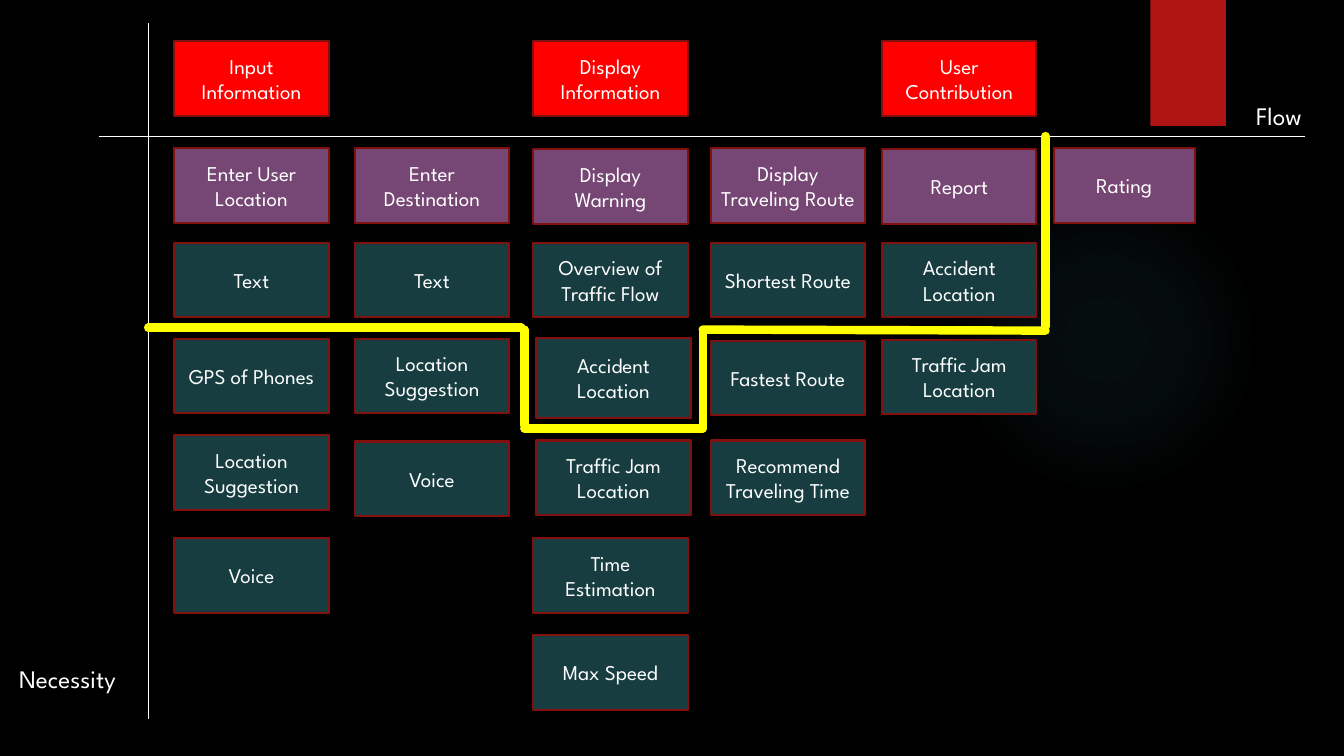
from lxml.etree import SubElement
from pptx import Presentation
from pptx.dml.color import RGBColor
from pptx.enum.shapes import MSO_CONNECTOR, MSO_SHAPE
from pptx.enum.text import MSO_ANCHOR, PP_ALIGN
from pptx.oxml import parse_xml
from pptx.oxml.ns import nsdecls, qn
from pptx.util import Inches, Pt

COLORS = {
    "background": "000000", "text": "FFFFFF", "axis": "FFFFFF",
    "activity": "FF0000", "task": "764674", "detail": "173D40",
    "border": "82100E", "release": "FFFF00", "ribbon": "B01513", "glow": "50B9C1",
}
FONT = "League Spartan"
CARD_WIDTH, CARD_HEIGHT = 1.53, 0.74

# Each column holds its left edge and its cards as (kind, top, text), relative to the board.
COLUMNS = [
    (0, [("activity", 0, "Input Information"), ("task", 1.06, "Enter User Location"),
         ("detail", 2, "Text"), ("detail", 2.95, "GPS of Phones"),
         ("detail", 3.91, "Location Suggestion"), ("detail", 4.93, "Voice")]),
    (1.79, [("task", 1.06, "Enter Destination"), ("detail", 2, "Text"),
            ("detail", 2.95, "Location Suggestion"), ("detail", 3.97, "Voice")]),
    (3.56, [("activity", 0, "Display Information"), ("task", 1.07, "Display Warning"),
            ("detail", 2, "Overview of Traffic Flow"),
            ("detail", 4.93, "Time Estimation"), ("detail", 5.89, "Max Speed")]),
    (3.59, [("detail", 2.94, "Accident Location"), ("detail", 3.96, "Traffic Jam Location")]),
    (5.32, [("task", 1.06, "Display Traveling Route"), ("detail", 2, "Shortest Route"),
            ("detail", 2.97, "Fastest Route"), ("detail", 3.96, "Recommend Traveling Time")]),
    (7.02, [("activity", 0, "User Contribution"), ("task", 1.07, "Report"),
            ("detail", 2, "Accident Location"), ("detail", 2.96, "Traffic Jam Location")]),
    (8.72, [("task", 1.06, "Rating")]),
]
SPECIAL_SIZES = {"Rating": (1.4, CARD_HEIGHT), (3.59, 2.94): (CARD_WIDTH, 0.8)}
RELEASE_SEGMENTS = [
    (0, 1.9, 3.7, 1.9), (3.73, 1.92, 3.73, 2.87), (3.73, 2.9, 5.5, 2.9),
    (5.5, 2.9, 5.5, 1.93), (5.5, 1.92, 8.9, 1.93), (8.9, 1.89, 8.9, 0),
]


def color(name):
    """Return the named colour."""
    return RGBColor.from_string(COLORS[name])


def add_run(paragraph, text, size):
    """Add one formatted run to a paragraph."""
    run = paragraph.add_run()
    run.text = text
    run.font.name = FONT
    run.font.size = Pt(size)
    run.font.color.rgb = color("text")


def add_block(slide, kind, box, fill):
    """Add a flat preset shape without outline."""
    shape = slide.shapes.add_shape(kind, *map(Inches, box))
    shape.shadow.inherit = False
    shape.fill.solid()
    shape.fill.fore_color.rgb = color(fill)
    shape.line.fill.background()
    return shape


def add_line(slide, start, end, name, width, cap="flat"):
    """Add a straight line between two points."""
    line = slide.shapes.add_connector(MSO_CONNECTOR.STRAIGHT, *map(Inches, start + end))
    line.line.color.rgb = color(name)
    line.line.width = Pt(width)
    properties = line._element.spPr
    properties.find(qn("a:ln")).set("cap", cap)
    SubElement(properties, qn("a:effectLst"))


def add_label(slide, box, text, wrap):
    """Add an axis label."""
    frame = slide.shapes.add_textbox(*map(Inches, box)).text_frame
    frame.word_wrap = wrap
    add_run(frame.paragraphs[0], text, 18)


def add_card(slide, box, kind, text):
    """Add one story card."""
    shape = add_block(slide, MSO_SHAPE.RECTANGLE, box, kind)
    shape.line.color.rgb = color("border")
    shape.line.width = Pt(1.5)
    frame = shape.text_frame
    frame.word_wrap = True
    frame.vertical_anchor = MSO_ANCHOR.MIDDLE
    paragraph = frame.paragraphs[0]
    paragraph.alignment = PP_ALIGN.CENTER
    add_run(paragraph, text, 15)


def add_backdrop(slide, width):
    """Add the background, the soft glow and the ribbon at the right."""
    slide.background.fill.solid()
    slide.background.fill.fore_color.rgb = color("background")
    glow = add_block(slide, MSO_SHAPE.OVAL, (width - 3.92, 1.83, 3.08, 3.08), "glow")
    stops = "".join(
        f'<a:gs pos="{position * 1000}"><a:srgbClr val="{COLORS["glow"]}">'
        f'<a:alpha val="{alpha * 1000}"/></a:srgbClr></a:gs>'
        for position, alpha in [(0, 7), (36, 6), (69, 0)])
    gradient = parse_xml(
        f'<a:gradFill {nsdecls("a")}><a:gsLst>{stops}</a:gsLst><a:path path="circle">'
        '<a:fillToRect l="50000" t="50000" r="50000" b="50000"/></a:path></a:gradFill>')
    properties = glow._element.spPr
    properties.replace(properties.find(qn("a:solidFill")), gradient)
    add_block(slide, MSO_SHAPE.RECTANGLE, (width - 1.92, 0, 0.75, 1.25), "ribbon")


def add_axes(slide, left, top):
    """Add both axes and their labels around the crossing point."""
    add_line(slide, (left, top - 1.12), (left, top + 5.78), "axis", 0.75)
    add_line(slide, (left - 0.49, top), (left + 11.47, top), "axis", 0.75)
    add_label(slide, (left + 10.89, top - 0.4, 1.17, 0.4), "Flow", True)
    add_label(slide, (left - 1.38, top + 5.18, 1.18, 0.4), "Necessity", False)


def add_cards(slide, left, top):
    """Add all columns of cards from the top left corner of the board."""
    for column, cards in COLUMNS:
        for kind, row, text in cards:
            size = SPECIAL_SIZES.get(text) or SPECIAL_SIZES.get(
                (column, row), (CARD_WIDTH, CARD_HEIGHT))
            add_card(slide, (left + column, top + row, *size), kind, text)


def add_release_line(slide, left, top):
    """Add the stepped release boundary from the crossing of the axes."""
    for x1, y1, x2, y2 in RELEASE_SEGMENTS:
        add_line(slide, (left + x1, top + y1), (left + x2, top + y2), "release", 6, "rnd")


def main():
    """Build the story map slide."""
    presentation = Presentation()
    presentation.slide_width = Inches(13.33)
    presentation.slide_height = Inches(7.5)
    slide = presentation.slides.add_slide(presentation.slide_layouts[6])
    add_backdrop(slide, 13.33)
    add_axes(slide, 1.47, 1.35)
    add_cards(slide, 1.73, 0.41)
    add_release_line(slide, 1.47, 1.35)
    presentation.save("out.pptx")


if __name__ == "__main__":
    main()
